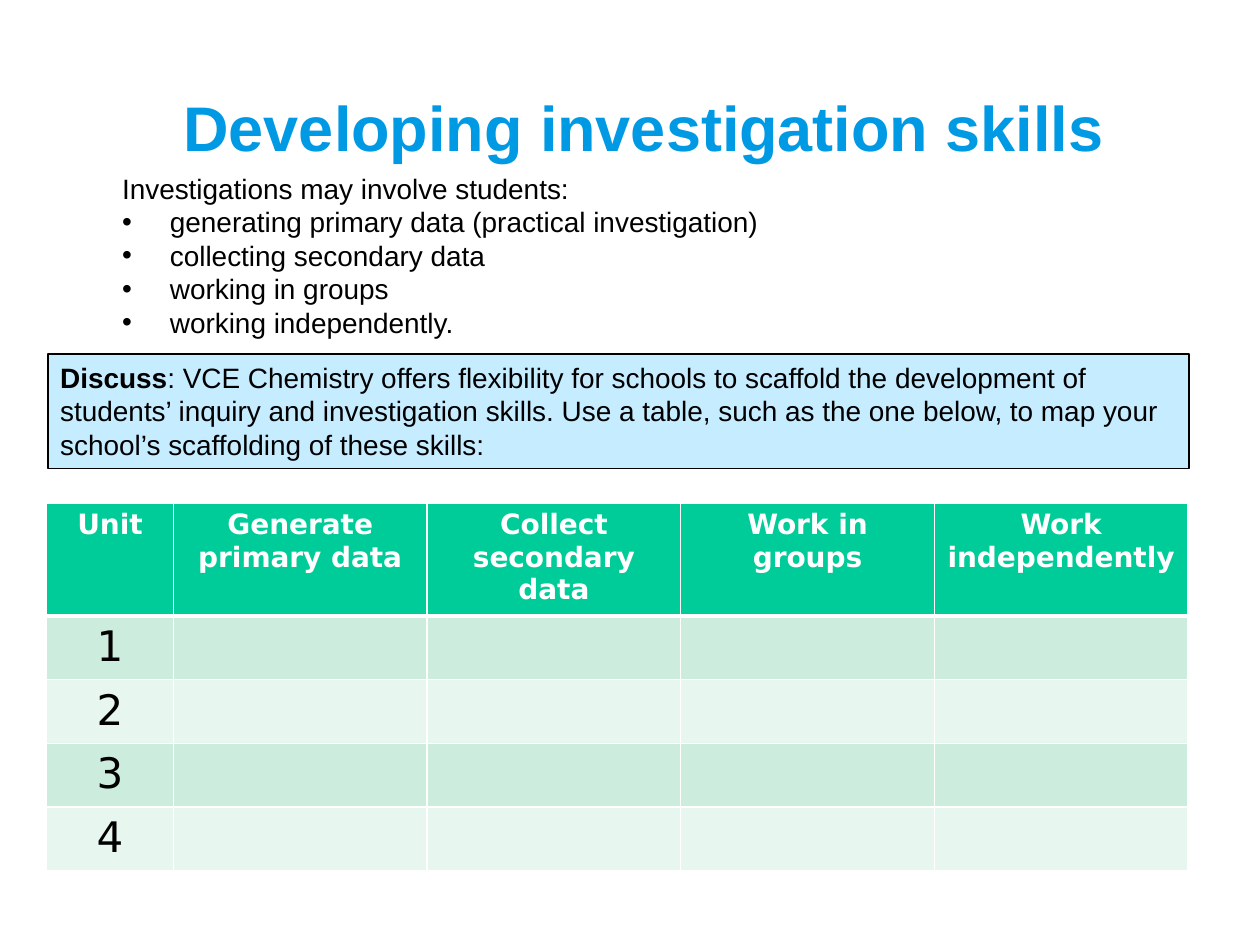
from pptx import Presentation
from pptx.dml.color import RGBColor
from pptx.enum.shapes import MSO_SHAPE as Shape
from pptx.enum.text import MSO_ANCHOR as Anchor, PP_ALIGN as Align
from pptx.oxml import parse_xml
from pptx.oxml.ns import nsdecls
from pptx.util import Emu, Inches, Pt

COLOURS = {
    "title": "0099E3", "text": "000000", "panel": "C6ECFF", "white": "FFFFFF",
    "header": "00CC99", "odd_row": "CCECDE", "even_row": "E7F6EF",
}
CELL = Inches(0.1)  # the slide is a grid of 100 columns by 75 rows
COLUMNS, ROWS = 100, 75

SKILLS = ["Generate primary data", "Collect secondary data",
          "Work in groups", "Work independently"]
UNITS = ["1", "2", "3", "4"]
INVOLVEMENT = [
    "generating primary data (practical investigation)",
    "collecting secondary data",
    "working in groups",
    "working independently.",
]
TASK = (": VCE Chemistry offers flexibility for schools to scaffold the "
        "development of students’ inquiry and investigation skills. Use a table, "
        "such as the one below, to map your school’s scaffolding of these skills:")


def grid(*lengths):
    return [Emu(round(length * CELL)) for length in lengths]


def colour(key):
    return RGBColor.from_string(COLOURS[key])


def paint(fill, key):
    fill.solid()
    fill.fore_color.rgb = colour(key)


def style(paragraph, size, key="text", face="Arial", bold=False, align=Align.LEFT):
    paragraph.alignment = align
    font = paragraph.font
    font.name, font.size, font.bold = face, Pt(size), bold
    font.color.rgb = colour(key)


def add_bullet(paragraph, indent):
    properties = paragraph._p.get_or_add_pPr()
    properties.set("marL", str(indent))
    properties.set("indent", str(-indent))
    properties.append(parse_xml(f'<a:buFont {nsdecls("a")} typeface="Arial"/>'))
    properties.append(parse_xml(f'<a:buChar {nsdecls("a")} char="•"/>'))


def add_borders(cell, bottom_width):
    properties = cell._tc.get_or_add_tcPr()
    for side, width in (("L", 1), ("R", 1), ("T", 1), ("B", bottom_width)):
        properties.append(parse_xml(
            f'<a:ln{side} {nsdecls("a")} w="{Pt(width)}"><a:solidFill>'
            f'<a:srgbClr val="{COLOURS["white"]}"/></a:solidFill></a:ln{side}>'))


def add_title(slide, box):
    frame = slide.shapes.add_textbox(*grid(*box)).text_frame
    frame.word_wrap = True
    frame.vertical_anchor = Anchor.MIDDLE
    frame.text = "Developing investigation skills"
    style(frame.paragraphs[0], 36, "title", bold=True, align=Align.CENTER)


def add_involvement_list(slide, box):
    frame = slide.shapes.add_textbox(*grid(*box)).text_frame
    frame.word_wrap = True
    frame.text = "Investigations may involve students:"
    style(frame.paragraphs[0], 16)
    for activity in INVOLVEMENT:
        item = frame.add_paragraph()
        item.text = activity
        add_bullet(item, Inches(0.38))
        style(item, 16)


def add_discussion(slide, box):
    panel = slide.shapes.add_shape(Shape.RECTANGLE, *grid(*box))
    panel.shadow.inherit = False
    paint(panel.fill, "panel")
    panel.line.color.rgb = colour("text")
    panel.line.width = Pt(1)
    frame = panel.text_frame
    frame.word_wrap = True
    frame.vertical_anchor = Anchor.TOP
    prompt = frame.paragraphs[0]
    style(prompt, 16)
    lead = prompt.add_run()
    lead.text = "Discuss"
    lead.font.bold = True
    prompt.add_run().text = TASK


def add_skills_table(slide, box, header_height):
    """Place a unit column half as wide as each of the skill columns."""
    left, top, width, height = box
    rows = [["Unit", *SKILLS]] + [[unit] + [""] * len(SKILLS) for unit in UNITS]
    table = slide.shapes.add_table(len(rows), len(rows[0]), *grid(*box)).table

    skill_width = width / (len(SKILLS) + 0.5)
    widths = grid(skill_width / 2, *[skill_width] * len(SKILLS))
    for column, column_width in zip(table.columns, widths):
        column.width = column_width
    unit_height = (height - header_height) / len(UNITS)
    heights = grid(header_height, *[unit_height] * len(UNITS))
    for row, row_height in zip(table.rows, heights):
        row.height = row_height

    for r, values in enumerate(rows):
        is_header = r == 0
        fill = "header" if is_header else "odd_row" if r % 2 else "even_row"
        for c, value in enumerate(values):
            cell = table.cell(r, c)
            add_borders(cell, 3 if is_header else 1)
            paint(cell.fill, fill)
            cell.text = value
            style(cell.text_frame.paragraphs[0], 16 if is_header else 24,
                  "white" if is_header else "text", "DejaVu Sans",
                  is_header, Align.CENTER)


def main():
    deck = Presentation()
    deck.slide_width, deck.slide_height = grid(COLUMNS, ROWS)
    slide = deck.slides.add_slide(deck.slide_layouts[6])
    add_title(slide, (8.6, 6, 85, 8))
    add_involvement_list(slide, (8.7, 13.1, 85.8, 14.5))
    add_discussion(slide, (3.8, 28.1, 90.6, 9.1))
    add_skills_table(slide, (3.7, 39.9, 90.6, 28.1), header_height=7.9)
    deck.save("out.pptx")


if __name__ == "__main__":
    main()
